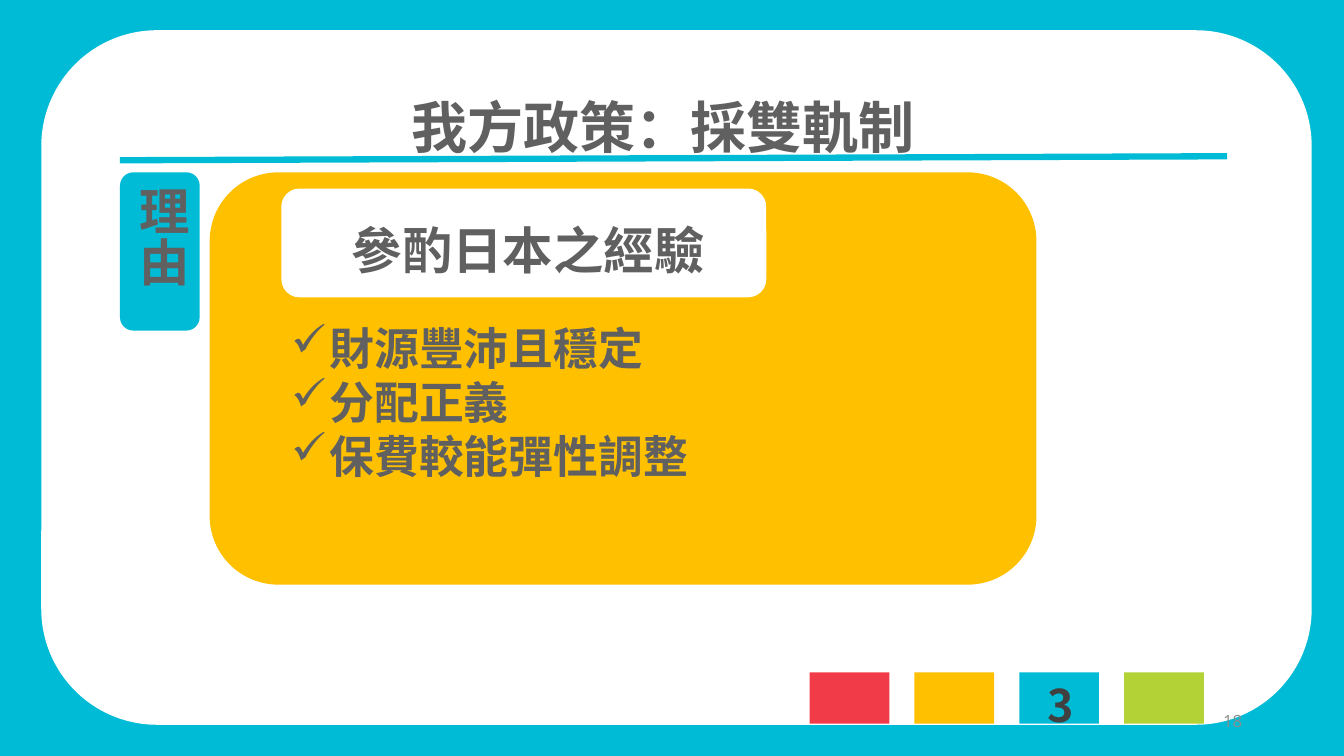
from lxml.etree import SubElement
from pptx import Presentation
from pptx.dml.color import RGBColor
from pptx.enum.shapes import MSO_CONNECTOR, MSO_SHAPE
from pptx.enum.text import MSO_ANCHOR, PP_ALIGN
from pptx.oxml.ns import qn
from pptx.util import Inches, Pt

COLORS = {
    "cyan": "00BBD6", "white": "FFFFFF", "yellow": "FFC000", "red": "F23B49",
    "green": "B3D236", "text": "606060", "dark": "404040", "pale": "8C8C8C",
}
HEADING_FONT = "Noto Sans CJK SC"
NUMBER_FONT = "Open Sans"
REASONS = ["財源豐沛且穩定", "分配正義", "保費較能彈性調整"]
CHIPS = ["red", "yellow", "cyan", "green"]


def rgb(name):
    return RGBColor.from_string(COLORS[name])


def add_block(page, kind, box, color):
    block = page.shapes.add_shape(kind, *map(Inches, box))
    block.shadow.inherit = False
    block.fill.solid()
    block.fill.fore_color.rgb = rgb(color)
    block.line.fill.background()
    return block


def write(shape, lines, size, color="text", font=HEADING_FONT, bold=True,
          align=PP_ALIGN.LEFT, anchor=MSO_ANCHOR.TOP):
    """Fill a shape with one paragraph per line, set on a tight line pitch."""
    frame = shape.text_frame
    frame.word_wrap = True
    frame.vertical_anchor = anchor
    frame.text = "\n".join(lines)
    if anchor == MSO_ANCHOR.TOP:
        frame.margin_top = Inches(0.05) + Pt(size * 0.1)
    for para in frame.paragraphs:
        para.alignment = align
        para.line_spacing = Pt(size * 1.2)
        for span in para.runs:
            span.font.size = Pt(size)
            span.font.bold = bold
            span.font.name = font
            span.font.color.rgb = rgb(color)
            SubElement(span.font._element, qn("a:ea"), typeface=font)
    return frame


def add_text(page, box, text, size, **style):
    label = page.shapes.add_textbox(*map(Inches, box))
    return write(label, [text], size, **style)


def add_checks(frame):
    for para in frame.paragraphs:
        props = para._p.get_or_add_pPr()
        props.set("marL", str(Inches(0.38)))
        props.set("indent", str(-Inches(0.38)))
        SubElement(props, qn("a:buChar"), char="✓")


def add_rule(page, start, end, color, width):
    rule = page.shapes.add_connector(MSO_CONNECTOR.STRAIGHT,
                                     *map(Inches, start + end))
    rule.line.color.rgb = rgb(color)
    rule.line.width = Pt(width)
    SubElement(rule._element.spPr, qn("a:effectLst"))


def add_reason_tab(page):
    add_block(page, MSO_SHAPE.ROUNDED_RECTANGLE, (1.19, 1.71, 0.79, 1.57), "cyan")
    frame = add_text(page, (1.18, 1.76, 0.81, 1.48), "理由", 36)
    frame.margin_top = Inches(0.09)
    frame.margin_left = frame.margin_right = Inches(0.07)
    frame._txBody.bodyPr.set("vert", "eaVert")


def add_reason_panel(page):
    rounded = MSO_SHAPE.ROUNDED_RECTANGLE
    add_block(page, rounded, (2.08, 1.71, 8.2, 4.09), "yellow")
    reasons = add_block(page, MSO_SHAPE.RECTANGLE, (2.79, 3.09, 6.6, 1.72), "yellow")
    add_checks(write(reasons, REASONS, 32))
    add_block(page, rounded, (2.79, 1.87, 4.81, 1.08), "white")
    add_text(page, (3.39, 2.07, 5.32, 0.69), "參酌日本之經驗", 36)


def add_section_chips(page):
    for index, color in enumerate(CHIPS):
        box = (8.03 + index * 1.04, 6.67, 0.79, 0.51)
        add_block(page, MSO_SHAPE.RECTANGLE, box, color)
    add_text(page, (10.29, 6.63, 0.45, 0.64), "3", 32, color="dark")


def main():
    deck = Presentation()
    deck.slide_width, deck.slide_height = Inches(13.33), Inches(7.5)
    page = deck.slides.add_slide(deck.slide_layouts[6])
    page.background.fill.solid()
    page.background.fill.fore_color.rgb = rgb("cyan")

    add_block(page, MSO_SHAPE.ROUNDED_RECTANGLE, (0.41, 0.3, 12.6, 6.89), "white")
    add_text(page, (9.42, 6.95, 3, 0.4), "18", 12, color="pale", font=NUMBER_FONT,
             bold=False, align=PP_ALIGN.RIGHT, anchor=MSO_ANCHOR.MIDDLE)
    add_text(page, (3.98, 0.81, 5.39, 0.77), "我方政策：採雙軌制", 40)
    add_rule(page, (1.19, 1.59), (12.17, 1.55), "cyan", 4.5)
    add_section_chips(page)
    add_reason_tab(page)
    add_reason_panel(page)
    deck.save("out.pptx")


if __name__ == "__main__":
    main()
